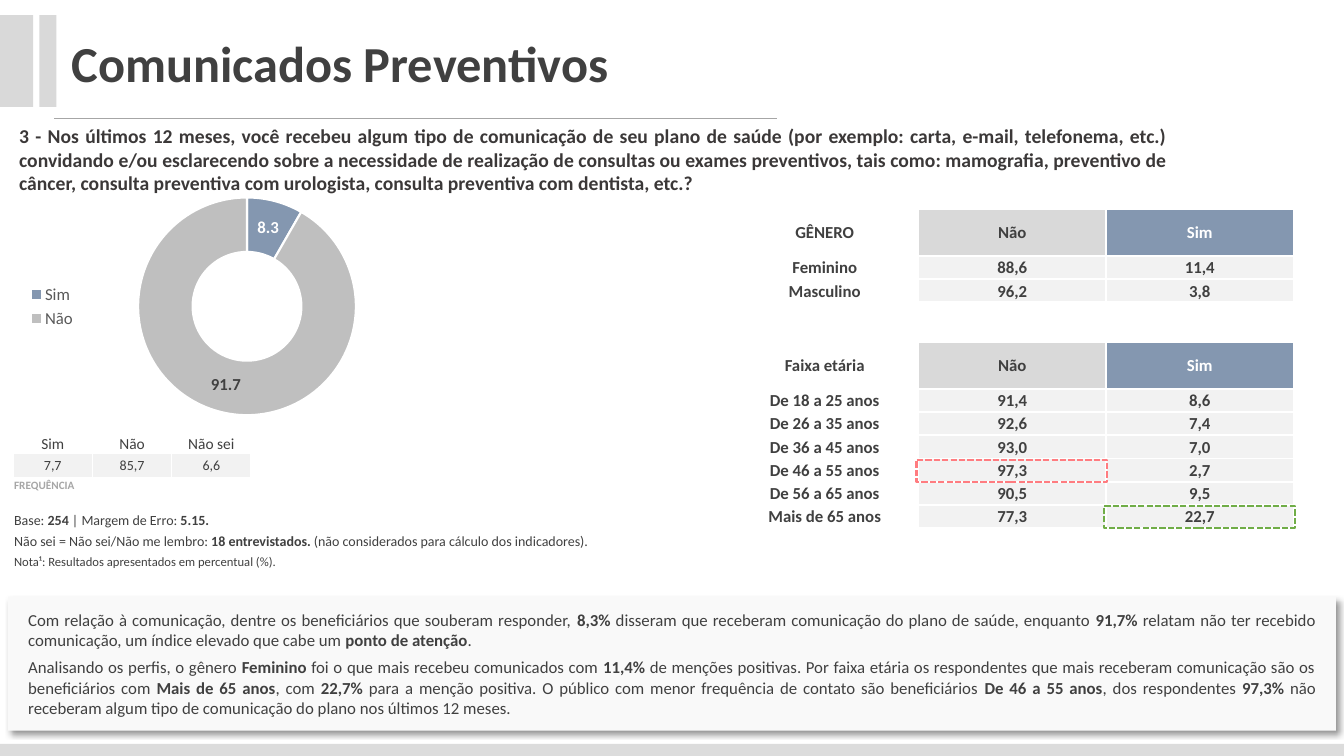
from lxml import etree
from pptx import Presentation
from pptx.chart.data import CategoryChartData
from pptx.dml.color import RGBColor
from pptx.enum.chart import XL_CHART_TYPE as ChartType, XL_LEGEND_POSITION as LegendPosition
from pptx.enum.dml import MSO_LINE_DASH_STYLE as Dash
from pptx.enum.shapes import MSO_CONNECTOR, MSO_SHAPE
from pptx.enum.text import MSO_ANCHOR as Anchor, PP_ALIGN as Align
from pptx.oxml import parse_xml
from pptx.oxml.ns import nsdecls, qn
from pptx.util import Inches, Pt

FONT = "Calibri"
COLORS = {
    "text": "404040", "question": "3B3838", "muted": "A6A6A6", "legend": "595959",
    "white": "FFFFFF", "blue": "8497B0", "gray": "D9D9D9", "ring": "BFBFBF",
    "cell": "F2F2F2", "panel": "F9F9F9", "footer": "DCDCDC",
    "low": "FF7C80", "high": "70AD47",
}
NO_STYLE = "{2D5ABB26-0587-4C30-8999-92F81FD0307C}"

QUESTION = (
    "3 - Nos últimos 12 meses, você recebeu algum tipo de comunicação de seu plano de saúde "
    "(por exemplo: carta, e-mail, telefonema, etc.) convidando e/ou esclarecendo sobre a "
    "necessidade de realização de consultas ou exames preventivos, tais como: mamografia, "
    "preventivo de câncer, consulta preventiva com urologista, consulta preventiva com dentista, etc.?"
)
# Bold passages stand between asterisks
FINDINGS = [
    "Com relação à comunicação, dentre os beneficiários que souberam responder, *8,3%* disseram "
    "que receberam comunicação do plano de saúde, enquanto *91,7%* relatam não ter recebido "
    "comunicação, um índice elevado que cabe um *ponto de atenção*.",
    "Analisando os perfis, o gênero *Feminino *foi o que mais recebeu comunicados com *11,4% *de "
    "menções positivas. Por faixa etária os respondentes que mais receberam comunicação são os "
    "beneficiários com *Mais de 65 anos*, com *22,7% *para a menção positiva. O público com menor "
    "frequência de contato são beneficiários *De 46 a 55 anos*, dos respondentes *97,3% *não "
    "receberam algum tipo de comunicação do plano nos últimos 12 meses.",
]
NOTES = [
    ("Base: *254* | Margem de Erro: *5.15.*", 10),
    ("Não sei = Não sei/Não me lembro: *18 entrevistados.* (não considerados para cálculo "
     "dos indicadores).", 10),
    ("Nota¹: Resultados apresentados em percentual (%).", 9),
]
PROFILE = [
    ("GÊNERO", "Não", "Sim"),
    ("Feminino", "88,6", "11,4"),
    ("Masculino", "96,2", "3,8"),
    None,
    ("Faixa etária", "Não", "Sim"),
    ("De 18 a 25 anos", "91,4", "8,6"),
    ("De 26 a 35 anos", "92,6", "7,4"),
    ("De 36 a 45 anos", "93,0", "7,0"),
    ("De 46 a 55 anos", "97,3", "2,7"),
    ("De 56 a 65 anos", "90,5", "9,5"),
    ("Mais de 65 anos", "77,3", "22,7"),
]


def rgb(name):
    return RGBColor.from_string(COLORS[name])


def style_font(font, size, color, bold=False):
    font.name, font.size, font.bold = FONT, Pt(size), bold
    font.color.rgb = rgb(color)


def write(paragraph, text, size, color="text", bold=False, align=Align.LEFT):
    paragraph.alignment = align
    for index, part in enumerate(text.split("*")):
        if part:
            run = paragraph.add_run()
            run.text = part
            style_font(run.font, size, color, bold or index % 2 == 1)


def set_margins(frame, horizontal, vertical):
    frame.margin_left = frame.margin_right = Inches(horizontal)
    frame.margin_top = frame.margin_bottom = Inches(vertical)


def add_rectangle(slide, box, fill=None):
    shape = slide.shapes.add_shape(MSO_SHAPE.RECTANGLE, *map(Inches, box))
    shape.shadow.inherit = False
    shape.line.fill.background()
    if fill:
        shape.fill.solid()
        shape.fill.fore_color.rgb = rgb(fill)
    else:
        shape.fill.background()
    return shape


def add_text(slide, box, text, size, color, margins, align=Align.LEFT):
    frame = slide.shapes.add_textbox(*map(Inches, box)).text_frame
    frame.word_wrap = True
    set_margins(frame, *margins)
    write(frame.paragraphs[0], text, size, color, True, align)


def add_grid(slide, box, heights, columns):
    left, top, width = box
    table = slide.shapes.add_table(
        len(heights), columns, *map(Inches, (left, top, width, sum(heights)))).table
    table.first_row = table.horz_banding = False
    table._tbl.tblPr.find(qn("a:tableStyleId")).text = NO_STYLE
    for row, height in zip(table.rows, heights):
        row.height = Inches(height)
    for column in table.columns:
        column.width = Inches(width / columns)
    for cell in table.iter_cells():
        set_margins(cell, 0.01, 0.01)
        cell.margin_bottom = 0
    return table


def fill_cell(cell, text, size, color="text", bold=False, fill=None,
              align=Align.CENTER, anchor=Anchor.MIDDLE):
    cell.vertical_anchor = anchor
    write(cell.text_frame.paragraphs[0], text, size, color, bold, align)
    if fill:
        cell.fill.solid()
        cell.fill.fore_color.rgb = rgb(fill)


def add_borders(table, points):
    for cell in table.iter_cells():
        properties = cell._tc.get_or_add_tcPr()
        for index, side in enumerate(("lnL", "lnR", "lnT", "lnB")):
            properties.insert(index, parse_xml(
                f'<a:{side} {nsdecls("a")} w="{Pt(points)}"><a:solidFill>'
                f'<a:srgbClr val="{COLORS["white"]}"/></a:solidFill></a:{side}>'))


def add_header(slide, left, top):
    for offset, width in ((0, 0.34), (0.4, 0.17)):
        add_rectangle(slide, (left + offset, top, width, 0.91), "gray")
    add_text(slide, (left + 0.62, top + 0.12, 5.81, 0.71), "Comunicados Preventivos",
             36, "text", (0.1, 0.05))
    rule = slide.shapes.add_connector(MSO_CONNECTOR.STRAIGHT, *map(
        Inches, (left + 0.55, top + 1.02, left + 7.72, top + 1.02)))
    rule.line.color.rgb = rgb("muted")
    rule.line.width = Pt(0.5)
    etree.SubElement(rule._element.spPr, qn("a:effectLst"))


def add_doughnut(slide, box):
    data = CategoryChartData(number_format="0.0")
    data.categories = ["Sim", "Não"]
    data.add_series("Series 1", (8.3, 91.7))
    chart = slide.shapes.add_chart(ChartType.DOUGHNUT, *map(Inches, box), data).chart
    chart.has_title = False
    style_font(chart.font, 10, "text")
    chart.has_legend = True
    chart.legend.position = LegendPosition.LEFT
    chart.legend.include_in_layout = False
    style_font(chart.legend.font, 12, "legend")

    plot = chart.plots[0]
    plot.vary_by_categories = True
    plot._element.find(qn("c:holeSize")).set("val", "50")
    series = plot.series[0]
    for index, fill in enumerate(("blue", "ring")):
        point = series.points[index]
        point.format.fill.solid()
        point.format.fill.fore_color.rgb = rgb(fill)
        point.format.line.color.rgb = rgb("white")
        point.format.line.width = Pt(1.5)
    labels = series.data_labels
    labels.show_value = True
    labels.number_format, labels.number_format_is_linked = "0.0", False
    style_font(labels.font, 12, "white", True)
    style_font(series.points[1].data_label.font, 12, "text", True)

    # Fixed place of the ring inside the chart
    area = chart._chartSpace.chart.plotArea
    for layout in area.findall(qn("c:layout")):
        area.remove(layout)
    places = "".join(f'<c:{key} val="{value}"/>' for key, value in (
        ("layoutTarget", "inner"), ("xMode", "edge"), ("yMode", "edge"),
        ("x", 0.3), ("y", 0.06), ("w", 0.54), ("h", 0.88)))
    area.insert(0, parse_xml(
        f'<c:layout {nsdecls("c")}><c:manualLayout>{places}</c:manualLayout></c:layout>'))


def add_frequency(slide, box):
    table = add_grid(slide, box, (0.2, 0.24, 0.24), 3)
    for column, (answer, value) in enumerate((("Sim", "7,7"), ("Não", "85,7"), ("Não sei", "6,6"))):
        fill_cell(table.cell(0, column), answer, 11, anchor=Anchor.BOTTOM)
        fill_cell(table.cell(1, column), value, 10, fill="cell")
    table.cell(2, 0).merge(table.cell(2, 2))
    fill_cell(table.cell(2, 0), "FREQUÊNCIA", 8, "muted", True, align=Align.LEFT, anchor=Anchor.TOP)
    add_borders(table, 1)


def add_notes(slide, box):
    table = add_grid(slide, box, [0.21] * len(NOTES), 1)
    for row, (text, size) in enumerate(NOTES):
        fill_cell(table.cell(row, 0), text, size, align=Align.LEFT, anchor=Anchor.TOP)


def add_profile(slide, box):
    left, top, width = box
    heights = [0.39 if row is None else 0.47 if row[1] == "Não" else 0.23 for row in PROFILE]
    table = add_grid(slide, box, heights, 3)
    for index, row in enumerate(PROFILE):
        if row is None:
            table.cell(index, 0).merge(table.cell(index, 2))
            continue
        heading = row[1] == "Não"
        fills = (None, "gray", "blue") if heading else (None, "cell", "cell")
        for column, (text, fill) in enumerate(zip(row, fills)):
            fill_cell(table.cell(index, column), text, 12,
                      "white" if fill == "blue" else "text", True, fill)
    add_borders(table, 1.5)

    # Dashed frames around the extreme values
    for row, column, color in ((10, 2, "high"), (8, 1, "low")):
        frame = add_rectangle(slide, (left + column * width / 3 - 0.02,
                                      top + sum(heights[:row]) + 0.01, 1.89, 0.22))
        frame.line.color.rgb = rgb(color)
        frame.line.width = Pt(1.5)
        frame.line.dash_style = Dash.SQUARE_DOT


def add_findings(slide, box):
    panel = add_rectangle(slide, box, "panel")
    panel._element.spPr.find(qn("a:effectLst")).append(parse_xml(
        f'<a:outerShdw {nsdecls("a")} blurRad="{Pt(4)}" dist="{Pt(3)}" dir="2700000" algn="tl">'
        '<a:srgbClr val="000000"><a:alpha val="40000"/></a:srgbClr></a:outerShdw>'))
    frame = panel.text_frame
    frame.word_wrap = True
    frame.vertical_anchor = Anchor.MIDDLE
    set_margins(frame, 0.2, 0.04)
    for index, text in enumerate(FINDINGS):
        paragraph = frame.add_paragraph() if index else frame.paragraphs[0]
        if index:
            paragraph.space_before = Pt(5)
        write(paragraph, text, 12, align=Align.JUSTIFY)


def main():
    presentation = Presentation()
    presentation.slide_width, presentation.slide_height = Inches(13.33), Inches(7.5)
    slide = presentation.slides.add_slide(presentation.slide_layouts[6])
    add_rectangle(slide, (0, 7.38, 13.33, 0.12), "footer")
    add_header(slide, -0.01, 0.15)
    add_text(slide, (0.08, 1.17, 11.61, 0.82), QUESTION, 14, "question", (0.11, 0.06), Align.JUSTIFY)
    add_profile(slide, (7.25, 2.07, 5.58))
    add_frequency(slide, (0.13, 4.3, 2.36))
    add_notes(slide, (0.13, 5.07, 7.09))
    add_findings(slide, (0.08, 5.92, 13.17, 1.33))
    add_doughnut(slide, (0.17, 1.81, 4, 2.46))
    presentation.save("out.pptx")


if __name__ == "__main__":
    main()
